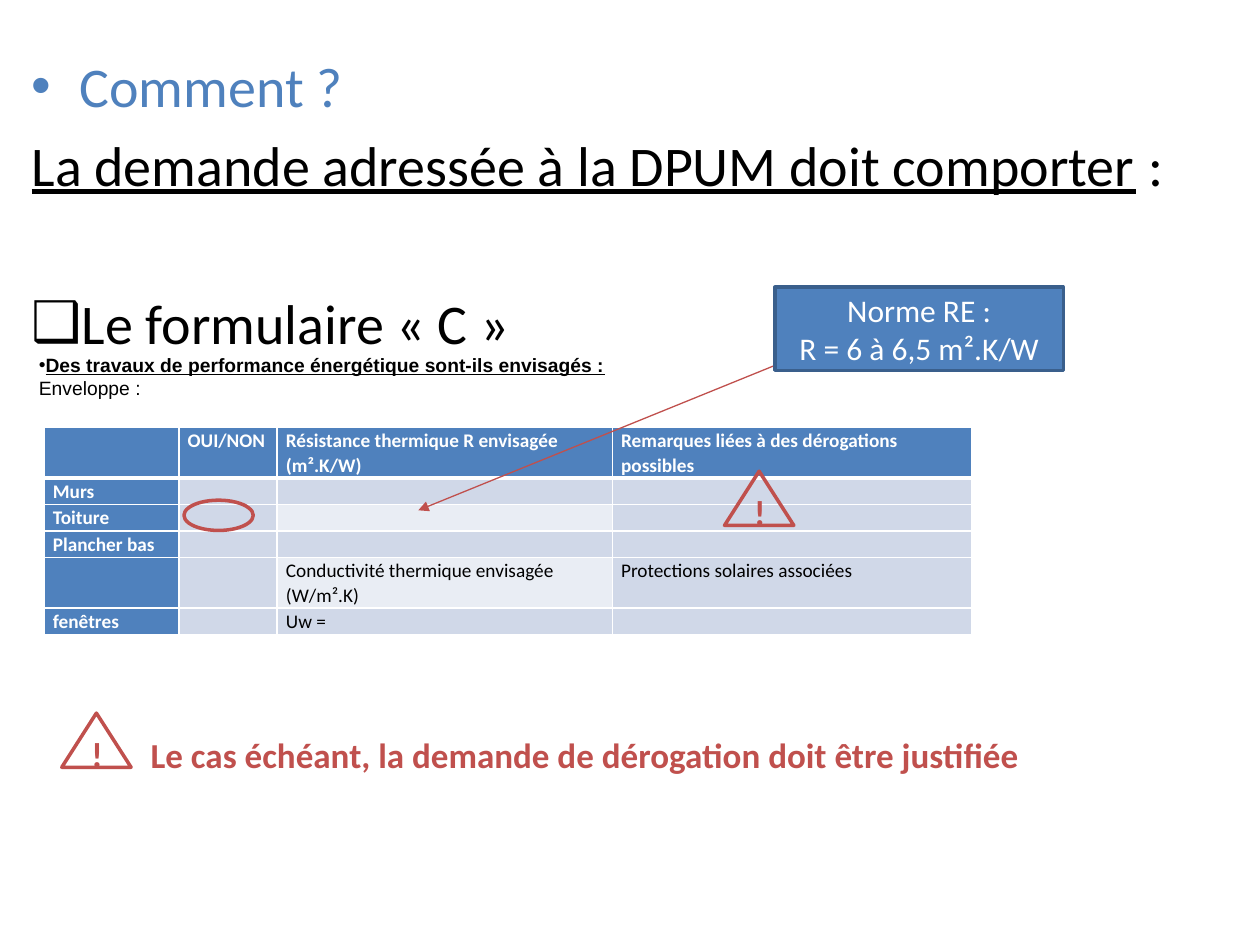
import dataclasses

import lxml.etree
import pptx
import pptx.dml.color
import pptx.enum.shapes
import pptx.enum.text
import pptx.oxml.ns
import pptx.util

BLUE, DARK_BLUE, RED = "4F81BD", "3A5F8C", "C0504D"
PALE, PALER = "D0D8E8", "E9EDF4"
BLACK, WHITE = "000000", "FFFFFF"
SHAPES = pptx.enum.shapes.MSO_SHAPE
ANCHORS = pptx.enum.text.MSO_ANCHOR
AUTO_SIZE = pptx.enum.text.MSO_AUTO_SIZE
CENTER = pptx.enum.text.PP_ALIGN.CENTER


@dataclasses.dataclass
class Run:
    text: str
    size: float
    color: str = BLACK
    bold: bool = False
    underline: bool = False
    font: str = "Calibri"


@dataclasses.dataclass
class Paragraph:
    runs: list
    bullet: str = ""
    indent: float = 0
    space_before: float = 0
    line_spacing: float = 1.0
    alignment: object = None


def rgb(color):
    return pptx.dml.color.RGBColor.from_string(color)


def add_element(parent, tag, **attributes):
    return lxml.etree.SubElement(parent, pptx.oxml.ns.qn(tag), attributes)


class SlideBuilder:
    """Places elements on a grid of 100 columns by 75 rows."""

    columns, rows = 100, 75

    def __init__(self, presentation, layout):
        self.presentation = presentation
        self.slide = presentation.slides.add_slide(layout)
        self.shapes = self.slide.shapes

    def x(self, columns):
        return round(self.presentation.slide_width * columns / self.columns)

    def y(self, rows):
        return round(self.presentation.slide_height * rows / self.rows)

    def box(self, left, top, width, height):
        return self.x(left), self.y(top), self.x(width), self.y(height)

    def add_paragraphs(self, frame, paragraphs):
        for index, content in enumerate(paragraphs):
            paragraph = frame.add_paragraph() if index else frame.paragraphs[0]
            paragraph.alignment = content.alignment
            paragraph.line_spacing = content.line_spacing
            paragraph.space_before = pptx.util.Pt(content.space_before)
            properties = paragraph._p.get_or_add_pPr()
            properties.set("marL", str(self.x(content.indent)))
            properties.set("indent", str(-self.x(content.indent)))
            if content.bullet:
                add_element(properties, "a:buFont", typeface="Arial")
                add_element(properties, "a:buChar", char=content.bullet)
            else:
                add_element(properties, "a:buNone")
            for part in content.runs:
                run = paragraph.add_run()
                run.text = part.text
                run.font.name = part.font
                run.font.size = pptx.util.Pt(part.size)
                run.font.bold = part.bold
                run.font.underline = part.underline
                run.font.color.rgb = rgb(part.color)

    def body(self, place, paragraphs):
        self.shapes.title.element.getparent().remove(self.shapes.title.element)
        body = self.slide.placeholders[1]
        body.left, body.top, body.width, body.height = self.box(*place)
        body.text_frame.auto_size = AUTO_SIZE.NONE
        self.add_paragraphs(body.text_frame, paragraphs)

    def text(self, place, paragraphs, anchor=ANCHORS.TOP):
        frame = self.shapes.add_textbox(*self.box(*place)).text_frame
        frame.word_wrap = True
        frame.auto_size = AUTO_SIZE.SHAPE_TO_FIT_TEXT
        frame.vertical_anchor = anchor
        self.add_paragraphs(frame, paragraphs)

    def shape(self, kind, place, paragraphs=(), fill=None, line=RED):
        shape = self.shapes.add_shape(kind, *self.box(*place))
        shape.shadow.inherit = False
        if fill:
            shape.fill.solid()
            shape.fill.fore_color.rgb = rgb(fill)
        else:
            shape.fill.background()
        shape.line.color.rgb = rgb(line)
        shape.line.width = pptx.util.Pt(2)
        shape.text_frame.vertical_anchor = ANCHORS.MIDDLE
        self.add_paragraphs(shape.text_frame, paragraphs)

    def warning(self, left, top):
        mark = Paragraph([Run("!", 20, RED, bold=True)], alignment=CENTER)
        self.shape(SHAPES.ISOSCELES_TRIANGLE, (left, top, 5.5, 4.3), [mark])

    def arrow(self, start, end):
        connector = self.shapes.add_connector(
            pptx.enum.shapes.MSO_CONNECTOR.STRAIGHT,
            self.x(start[0]), self.y(start[1]), self.x(end[0]), self.y(end[1]))
        connector.line.color.rgb = rgb(RED)
        connector.line.width = pptx.util.Pt(0.75)
        add_element(connector.line._get_or_add_ln(), "a:tailEnd", type="triangle")
        add_element(connector._element.spPr, "a:effectLst")

    def border(self, cell, top, bottom):
        properties = cell._tc.get_or_add_tcPr()
        for side, points in zip("LRTB", (1, 1, top, bottom)):
            line = add_element(properties, f"a:ln{side}", w=str(pptx.util.Pt(points)))
            add_element(add_element(line, "a:solidFill"), "a:srgbClr", val=WHITE)

    def table(self, left, top, widths, heights, content, paler_cells):
        place = self.box(left, top, sum(widths), sum(heights))
        table = self.shapes.add_table(len(heights), len(widths), *place).table
        table.horz_banding = False
        for column, width in zip(table.columns, widths):
            column.width = self.x(width)
        for row, height in zip(table.rows, heights):
            row.height = self.y(height)
        for r, texts in enumerate(content):
            for c, text in enumerate(texts):
                cell = table.cell(r, c)
                heading = r == 0 or c == 0
                cell.margin_left = cell.margin_right = self.x(0.7)
                cell.margin_top = cell.margin_bottom = 0
                self.border(cell, top=3 if r == 1 else 1, bottom=3 if r == 0 else 1)
                cell.fill.solid()
                pale = PALER if (r, c) in paler_cells else PALE
                cell.fill.fore_color.rgb = rgb(BLUE if heading else pale)
                color = WHITE if heading else BLACK
                runs = [Run(text, 11, color, bold=heading)] if text else []
                self.add_paragraphs(cell.text_frame, [Paragraph(runs, line_spacing=1.07)])
                if not text:
                    add_element(cell.text_frame.paragraphs[0]._p, "a:endParaRPr", sz="1100")


def main():
    presentation = pptx.Presentation()
    presentation.slide_width = pptx.util.Inches(10)
    presentation.slide_height = pptx.util.Inches(7.5)
    builder = SlideBuilder(presentation, presentation.slide_layouts[1])

    builder.body((1.5, 3.6, 96.9, 58.9), [
        Paragraph([Run("Comment ?", 32, BLUE)], bullet="•", indent=3.8),
        Paragraph([Run("La demande adressée à la DPUM doit comporter", 32, underline=True),
                   Run(" :", 32)], space_before=6.4),
        Paragraph([Run("Le formulaire « C »", 32)], bullet="❑", indent=3.8, space_before=52),
    ])
    builder.table(3.5, 33.9, (10.7, 7.8, 26.6, 28.5), (4, 2.1, 2.1, 2.1, 4, 2.1), [
        ("", "OUI/NON", "Résistance thermique R envisagée (m².K/W)",
         "Remarques liées à des dérogations possibles"),
        ("Murs", "", "", ""),
        ("Toiture", "", "", ""),
        ("Plancher bas", "", "", ""),
        ("", "", "Conductivité thermique envisagée (W/m².K)", "Protections solaires associées"),
        ("fenêtres", "", "Uw =", ""),
    ], paler_cells={(2, 2), (4, 2)})
    builder.text((2.1, 27.5, 62.2, 4.7), [
        Paragraph([Run("Des travaux de performance énergétique sont-ils envisagés :", 11,
                       bold=True, underline=True, font="Arial")], bullet="•"),
        Paragraph([Run("Enveloppe :", 11, font="Arial")]),
    ], ANCHORS.MIDDLE)
    builder.shape(SHAPES.OVAL, (14.6, 39.7, 5.5, 2.4))
    builder.arrow((61.5, 29), (33.2, 40.5))
    builder.shape(SHAPES.RECTANGLE, (61.5, 22.8, 22.9, 6.6), [
        Paragraph([Run(text, 18, WHITE)], alignment=CENTER)
        for text in ("Norme RE :", "R = 6 à 6,5 m².K/W")
    ], fill=BLUE, line=DARK_BLUE)
    builder.text((10.4, 57.7, 77.2, 4.4), [Paragraph([
        Run(" ", 18, RED, bold=True),
        Run("Le cas échéant, la demande de dérogation doit être justifiée", 20, RED, bold=True),
    ])])
    builder.warning(57.5, 37.4)
    builder.warning(4.9, 56.6)

    presentation.save("out.pptx")


if __name__ == "__main__":
    main()
